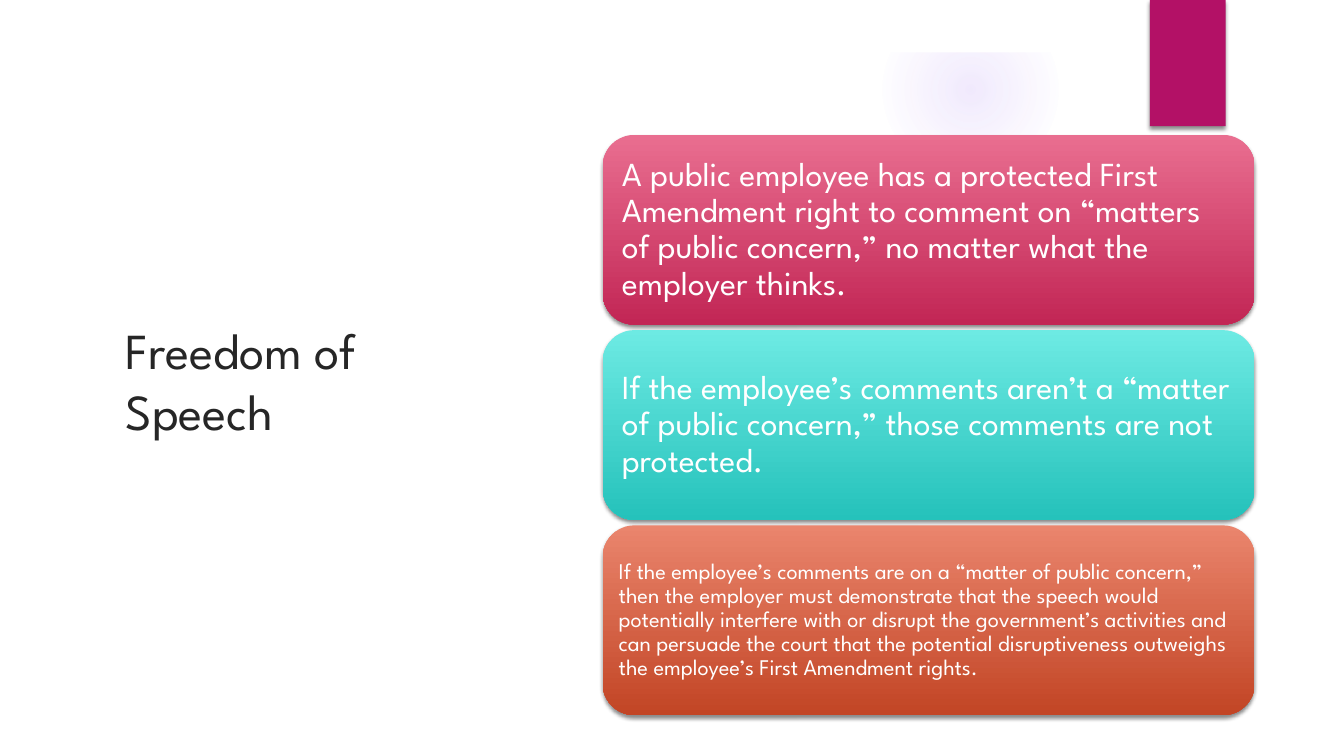
"""Build the Freedom of Speech slide with three stacked statement cards."""
from lxml import etree
from pptx import Presentation
from pptx import util as u
from pptx.dml.color import RGBColor
from pptx.enum import shapes, text
from pptx.oxml import parse_xml
from pptx.oxml.ns import nsdecls, qn

TITLE = "Freedom of Speech"
CARDS = [
    ("A public employee has a protected First Amendment right to comment on “matters of public "
     "concern,” no matter what the employer thinks.", 24, 0.25, "pink"),
    ("If the employee’s comments aren’t a “matter of public concern,” those comments are not "
     "protected.", 24, 0.25, "teal"),
    ("If the employee’s comments are on a “matter of public concern,” then the employer must "
     "demonstrate that the speech would potentially interfere with or disrupt the government’s "
     "activities and can persuade the court that the potential disruptiveness outweighs the "
     "employee’s First Amendment rights.", 16, 0.17, "orange"),
]
COLORS = {
    "white": "FFFFFF", "ink": "262626", "tab": "B31166", "glow": "9B6BF2", "shadow": "000000",
    "pink_top": "E96E90", "pink_end": "C22655",
    "teal_top": "6DEAE3", "teal_end": "25C2BB",
    "orange_top": "EA856D", "orange_end": "C24525",
}
GLOW_STOPS = [(0, 14), (36, 7), (73, 0)]
FONT = "League Spartan"
SLIDE_W, SLIDE_H = 33.87, 19.05
FRAME = 1.32
CARD_X, CARD_Y, CARD_W, CARD_H, CARD_STEP = 15.19, 3.4, 16.43, 4.78, 4.92
SHAPE = shapes.MSO_SHAPE


def rgb(name):
    return RGBColor.from_string(COLORS[name])


def add_shape(slide, kind, box, color=None):
    sp = slide.shapes.add_shape(kind, *map(u.Cm, box))
    sp.line.fill.background()
    sp.shadow.inherit = False
    if color:
        sp.fill.solid()
        sp.fill.fore_color.rgb = rgb(color)
    return sp


def add_shadow(sp):
    effects = sp._element.spPr.find(qn("a:effectLst"))
    effects.append(parse_xml(
        f'<a:outerShdw {nsdecls("a")} blurRad="{u.Pt(3)}" dist="{u.Pt(2)}" dir="5400000" '
        f'rotWithShape="0"><a:srgbClr val="{COLORS["shadow"]}"><a:alpha val="45000"/>'
        '</a:srgbClr></a:outerShdw>'))


def add_glow(slide, box):
    sp = add_shape(slide, SHAPE.OVAL, box, "glow")
    stops = "".join(
        f'<a:gs pos="{pos * 1000}"><a:srgbClr val="{COLORS["glow"]}">'
        f'<a:alpha val="{alpha * 1000}"/></a:srgbClr></a:gs>' for pos, alpha in GLOW_STOPS)
    grad = parse_xml(
        f'<a:gradFill {nsdecls("a")}><a:gsLst>{stops}</a:gsLst><a:path path="circle">'
        '<a:fillToRect l="50000" t="50000" r="50000" b="50000"/></a:path></a:gradFill>')
    spPr = sp._element.spPr
    spPr.replace(spPr.find(qn("a:solidFill")), grad)


def set_text(sp, words, size, color, inset, spacing):
    tf = sp.text_frame
    frame = {"word_wrap": True, "vertical_anchor": text.MSO_ANCHOR.MIDDLE}
    frame.update({f"margin_{side}": u.Cm(inset) for side in ("left", "top", "right", "bottom")})
    for key, value in frame.items():
        setattr(tf, key, value)
    p = tf.paragraphs[0]
    p.alignment, p.line_spacing = text.PP_ALIGN.LEFT, spacing
    r = p.add_run()
    r.text = words
    for key, value in {"name": FONT, "size": u.Pt(size)}.items():
        setattr(r.font, key, value)
    r.font.color.rgb = rgb(color)


def add_card(slide, row, words, size, inset, hue):
    box = (CARD_X, CARD_Y + row * CARD_STEP, CARD_W, CARD_H)
    sp = add_shape(slide, SHAPE.ROUNDED_RECTANGLE, box)
    sp.fill.gradient()
    sp.fill.gradient_angle = 270
    for stop, pos, end in zip(sp.fill.gradient_stops, (0, 1), ("top", "end")):
        stop.position = pos
        stop.color.rgb = rgb(f"{hue}_{end}")
    add_shadow(sp)
    set_text(sp, words, size, "white", inset, 0.9)


def main():
    prs = Presentation()
    prs.slide_width, prs.slide_height = u.Cm(SLIDE_W), u.Cm(SLIDE_H)
    slide = prs.slides.add_slide(prs.slide_layouts[6])
    add_glow(slide, (22.23, 0.03, 4.45, 4.45))
    frame = add_shape(slide, SHAPE.FRAME, (0, 0, SLIDE_W, SLIDE_H), "white")
    frame.adjustments[0] = FRAME / SLIDE_H
    add_shadow(add_shape(slide, SHAPE.RECTANGLE, (28.98, 0, 1.91, 3.18), "tab"))
    title = slide.shapes.add_textbox(*map(u.Cm, (2.92, 2.92, 7.04, 13.31)))
    set_text(title, TITLE, 36, "ink", 0.25, 1.0)
    for row, card in enumerate(CARDS):
        add_card(slide, row, *card)
    prs.save("out.pptx")


if __name__ == "__main__":
    main()
